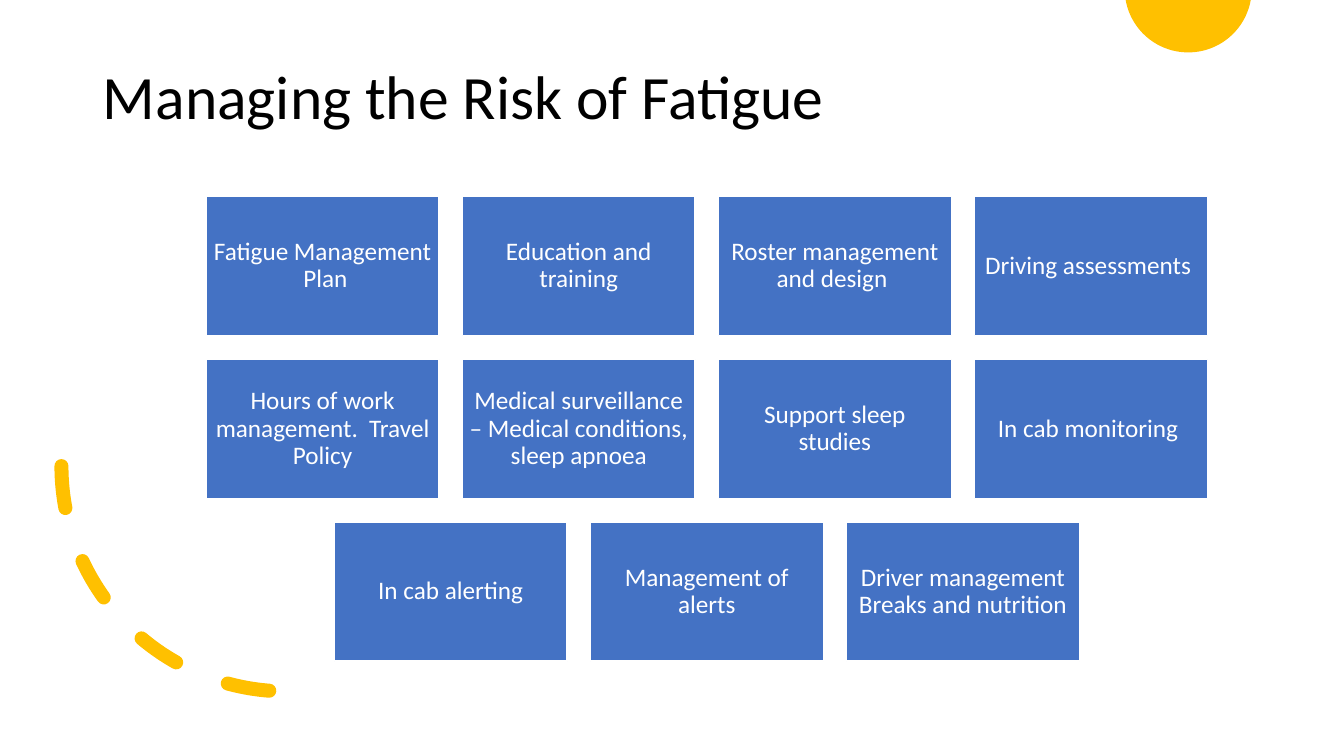
from math import asin, cos, pi, sin

from pptx import Presentation
from pptx.dml.color import RGBColor
from pptx.enum.dml import MSO_LINE as Dash
from pptx.enum.shapes import MSO_SHAPE as Kind
from pptx.enum.text import MSO_ANCHOR as Anchor, PP_ALIGN as Align
from pptx.util import Inches, Pt

TITLE = "Managing the Risk of Fatigue"
ROWS = [
    ["Fatigue Management  Plan", "Education and training",
     "Roster management and design ", "Driving assessments "],
    ["Hours of work management.  Travel Policy",
     "Medical surveillance – Medical conditions, sleep apnoea",
     "Support sleep studies", "In cab monitoring "],
    ["In cab alerting", "Management of alerts",
     "Driver management Breaks and nutrition"],
]


class Theme:
    font = "Calibri"
    black = RGBColor.from_string("000000")
    white = RGBColor.from_string("FFFFFF")
    blue = RGBColor.from_string("4472C4")
    gold = RGBColor.from_string("FFC000")
    head = Pt(44)
    body = Pt(18)
    thin = Pt(1)
    thick = Pt(10)


MID, TOP = 7.01, 1.95
WIDE, HIGH = 2.31, 1.38
STEP_X, STEP_Y = 2.54, 1.615
PAD = Inches(0.07)
SUN_X, SUN_Y, SUN_R = 11.785, -0.11, 0.63
SUN_STEPS = 90


def assign(item, **values):
    for name, value in values.items():
        setattr(item, name, value)


def write(frame, text, size, color, align, **values):
    assign(frame, text=text, word_wrap=True,
           vertical_anchor=Anchor.MIDDLE, **values)
    para = frame.paragraphs[0]
    assign(para, alignment=align, line_spacing=0.9)
    font = para.runs[0].font
    assign(font, name=Theme.font, size=size, bold=False)
    font.color.rgb = color


def paint(shape, color):
    shape.shadow.inherit = False
    shape.fill.solid()
    shape.fill.fore_color.rgb = color


def add_sun(shapes):
    """Draw the part of the circle that lies below the slide's top edge."""
    start = asin(-SUN_Y / SUN_R)
    sweep = pi - 2 * start
    turns = [start + sweep * i / SUN_STEPS for i in range(SUN_STEPS + 1)]
    points = [(Inches(SUN_X + SUN_R * cos(t)),
               Inches(max(0, SUN_Y + SUN_R * sin(t)))) for t in turns]
    pen = shapes.build_freeform(*points[0])
    pen.add_line_segments(points[1:], close=True)
    sun = pen.convert_to_shape()
    paint(sun, Theme.gold)
    sun.line.fill.background()


def add_arc(shapes):
    arc = shapes.add_shape(Kind.ARC, Inches(0.61), Inches(2.39),
                           Inches(4.47), Inches(4.47))
    arc.rotation = 90
    arc.shadow.inherit = False
    arc.fill.background()
    arc.line.color.rgb = Theme.gold
    assign(arc.line, width=Theme.thick, dash_style=Dash.DASH)
    arc.element.spPr.xfrm.set("flipV", "1")
    arc.line._ln.set("cap", "rnd")


def add_box(shapes, text, left, top):
    box = shapes.add_shape(Kind.RECTANGLE, Inches(left), Inches(top),
                           Inches(WIDE), Inches(HIGH))
    paint(box, Theme.blue)
    box.line.color.rgb = Theme.white
    box.line.width = Theme.thin
    write(box.text_frame, text, Theme.body, Theme.white, Align.CENTER,
          margin_left=PAD, margin_right=PAD, margin_top=PAD,
          margin_bottom=PAD)


def main():
    deck = Presentation()
    assign(deck, slide_width=Inches(13.33), slide_height=Inches(7.5))
    slide = deck.slides.add_slide(deck.slide_layouts[5])
    shapes = slide.shapes
    add_sun(shapes)
    title = shapes.title
    assign(title, left=Inches(0.92), top=Inches(0.4),
           width=Inches(11.48), height=Inches(1.17))
    write(title.text_frame, TITLE, Theme.head, Theme.black, Align.LEFT)
    add_arc(shapes)
    for r, row in enumerate(ROWS):
        left = MID - ((len(row) - 1) * STEP_X + WIDE) / 2
        for c, text in enumerate(row):
            add_box(shapes, text, left + c * STEP_X, TOP + r * STEP_Y)
    deck.save("out.pptx")


if __name__ == "__main__":
    main()
